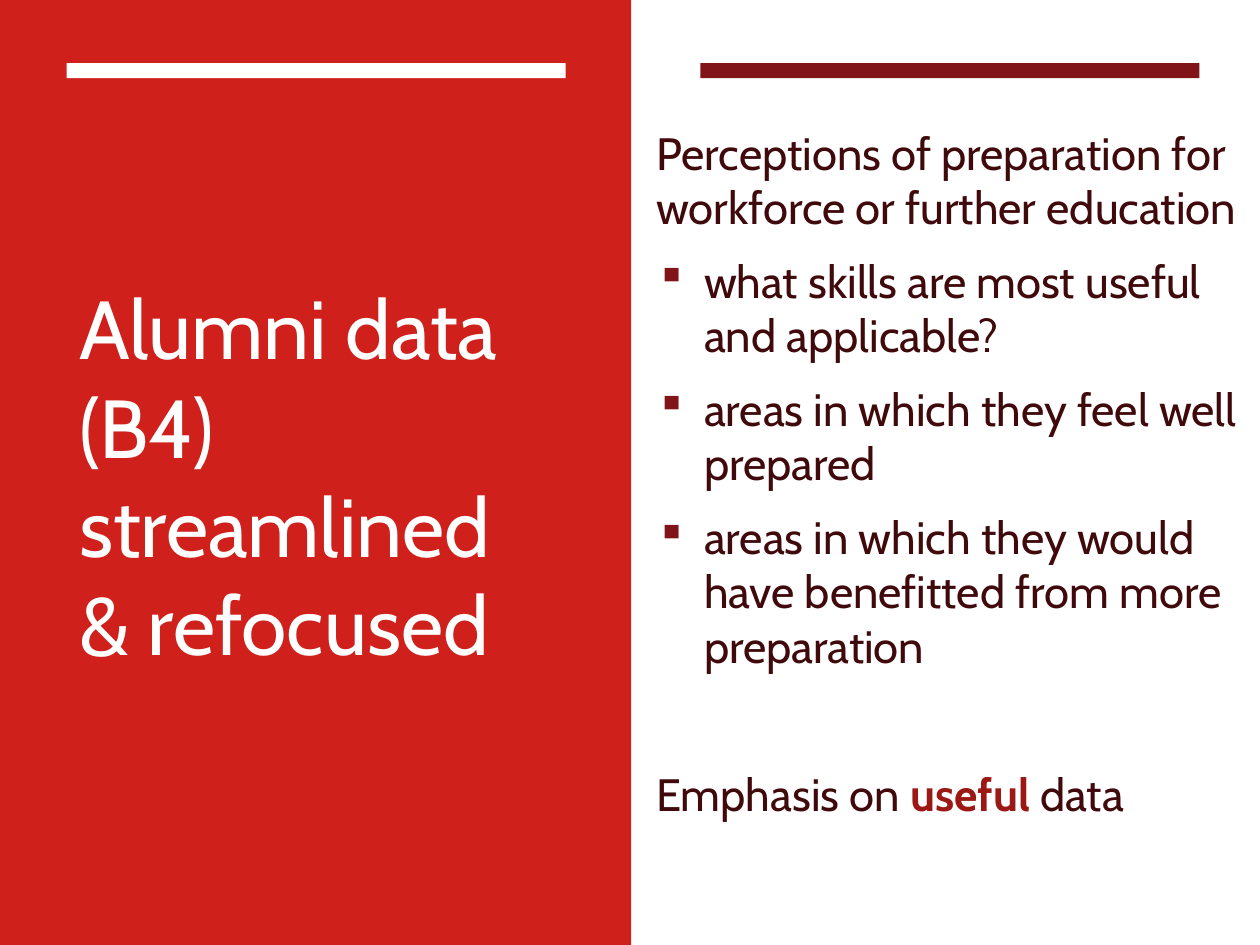
from lxml import etree
from pptx import Presentation
from pptx.dml.color import RGBColor
from pptx.enum.shapes import MSO_SHAPE
from pptx.enum.text import MSO_ANCHOR
from pptx.oxml.ns import qn
from pptx.util import Inches, Pt

RECT = MSO_SHAPE.RECTANGLE
MIDDLE = MSO_ANCHOR.MIDDLE

RED = "D0201C"
WHITE = "FFFFFF"
DARK = "811419"
INK = "400A0C"
ACCENT = "9C1815"


def color(code):
    return RGBColor.from_string(code)


class Deck:
    font = "Cabin"
    indent = 0.38

    def __init__(self, wide, high):
        self.prs = Presentation()
        self.prs.slide_width = Inches(wide)
        self.prs.slide_height = Inches(high)
        self.slide = self.prs.slides.add_slide(self.prs.slide_layouts[6])

    def rect(self, left, top, wide, high, fill):
        shape = self.slide.shapes.add_shape(
            RECT, Inches(left), Inches(top), Inches(wide), Inches(high))
        shape.shadow.inherit = False
        shape.fill.solid()
        shape.fill.fore_color.rgb = color(fill)
        shape.line.fill.background()

    def box(self, left, top, wide, high):
        frame = self.slide.shapes.add_textbox(
            Inches(left), Inches(top), Inches(wide), Inches(high)).text_frame
        frame.word_wrap = True
        frame.vertical_anchor = MIDDLE
        frame.margin_right = Inches(0.05)
        return frame

    def bullet(self, para):
        props = para._p.get_or_add_pPr()
        props.set("marL", str(Inches(self.indent)))
        props.set("indent", str(-Inches(self.indent)))
        tint = etree.SubElement(props, qn("a:buClr"))
        etree.SubElement(tint, qn("a:srgbClr"), val=DARK)
        etree.SubElement(props, qn("a:buSzPct"), val="92000")
        etree.SubElement(props, qn("a:buChar"), char="▪")

    def text(self, frame, parts, size, ink, before=0, after=0, dot=False):
        para = frame.paragraphs[0]
        if para.runs:
            para = frame.add_paragraph()
            para.space_before = Pt(before)
        para.space_after = Pt(after)
        if dot:
            self.bullet(para)
        para.font.name = self.font
        para.font.size = Pt(size)
        para.font.color.rgb = color(ink)
        for part, tint in parts:
            run = para.add_run()
            run.text = part
            if tint:
                run.font.bold = True
                run.font.color.rgb = color(tint)


def main():
    deck = Deck(10, 7.5)
    deck.rect(0, 0, 5.01, 7.5, RED)
    for left, fill in ((0.53, WHITE), (5.56, DARK)):
        deck.rect(left, 0.5, 3.96, 0.12, fill)

    title = deck.box(0.53, 1.13, 3.96, 5.28)
    deck.text(title, [("Alumni data (B4) streamlined & refocused", None)],
              47, WHITE)

    body = deck.box(5.11, 1.11, 4.8, 5.28)
    intro = "Perceptions of preparation for workforce or further education"
    points = [
        "what skills are most useful and applicable?",
        "areas in which they feel well prepared",
        "areas in which they would have benefitted from more preparation",
    ]
    deck.text(body, [(intro, None)], 25.9, INK, after=6)
    for point in points:
        deck.text(body, [(point, None)], 25.9, INK, 5, 6, True)
    close = [("Emphasis on ", None), ("useful", ACCENT), (" data", None)]
    deck.text(body, close, 25.9, INK, 47.5)

    deck.prs.save("out.pptx")


if __name__ == "__main__":
    main()
